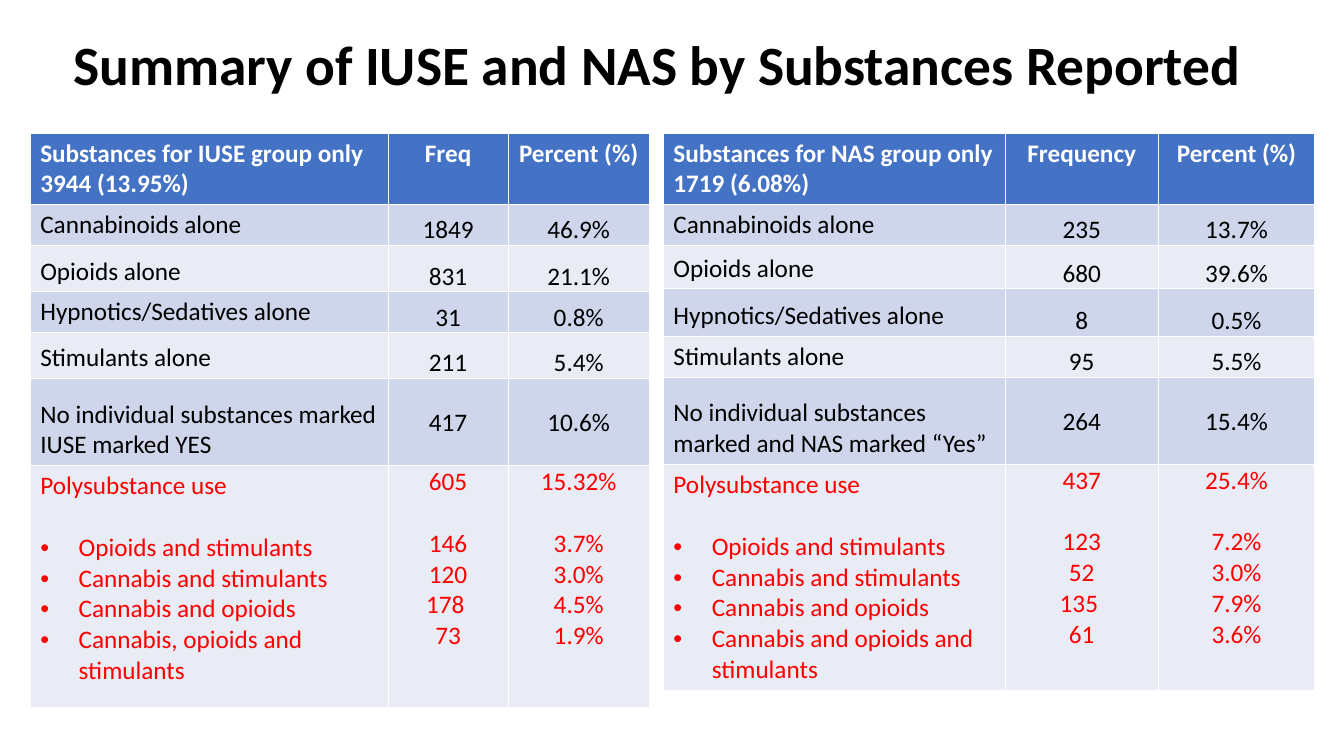
"""Build a slide with two tables of substances reported for IUSE and NAS."""
from lxml import etree
from pptx import Presentation, util as u
from pptx.dml.color import RGBColor
from pptx.enum import text
from pptx.oxml import ns

BLACK = RGBColor(0x00, 0x00, 0x00)
WHITE = RGBColor(0xFF, 0xFF, 0xFF)
RED = RGBColor(0xFF, 0x00, 0x00)
BLUE = RGBColor(0x44, 0x72, 0xC4)
BANDS = [RGBColor(0xE9, 0xEB, 0xF5), RGBColor(0xCF, 0xD5, 0xEA)]
LEFT, CENTER = text.PP_ALIGN.LEFT, text.PP_ALIGN.CENTER
TOP, MIDDLE, BOTTOM = (text.MSO_ANCHOR.TOP, text.MSO_ANCHOR.MIDDLE,
                       text.MSO_ANCHOR.BOTTOM)


def write(tf, lines, size=18, color=BLACK, bold=False, align=LEFT,
          bullets=False, gap=0):
    """Fill a text frame; bullets and gap apply below the first line."""
    for i, line in enumerate(lines.split("\n")):
        p = tf.paragraphs[0] if i == 0 else tf.add_paragraph()
        if bullets and i > 0:
            pPr = p._p.get_or_add_pPr()
            pPr.set("marL", str(u.Inches(0.38)))
            pPr.set("indent", str(u.Inches(-0.38)))
            etree.SubElement(pPr, ns.qn("a:buFont"), typeface="Arial")
            etree.SubElement(pPr, ns.qn("a:buChar"), char="•")
        if gap and i == 1:
            p.space_before = u.Pt(gap)
        p.alignment = align
        r = p.add_run()
        r.text = line
        r.font.name = "Calibri"
        r.font.size = u.Pt(size)
        r.font.bold = bold
        r.font.color.rgb = color


prs = Presentation()
prs.slide_width, prs.slide_height = u.Inches(13.33), u.Inches(7.5)
col, row = prs.slide_width / 100, prs.slide_height / 100
s = prs.slides.add_slide(prs.slide_layouts[5])

title = s.shapes.title
title.left, title.top = int(3.83 * col), int(5.33 * row)
title.width, title.height = int(91.07 * col), int(7.2 * row)
title.text_frame.auto_size = text.MSO_AUTO_SIZE.NONE
title.text_frame.vertical_anchor = MIDDLE
write(title.text_frame, "Summary of IUSE and NAS by Substances Reported ",
      size=39.6, bold=True, align=CENTER)
title.text_frame.paragraphs[0].line_spacing = 0.9

iuse = [
    ("Substances for IUSE group only\n3944 (13.95%)", "Freq", "Percent (%)"),
    ("Cannabinoids alone", "1849", "46.9%"),
    ("Opioids alone", "831", "21.1%"),
    ("Hypnotics/Sedatives alone", "31", "0.8%"),
    ("Stimulants alone", "211", "5.4%"),
    ("No individual substances marked\nIUSE marked YES", "417", "10.6%"),
    ("Polysubstance use\nOpioids and stimulants\nCannabis and stimulants\n"
     "Cannabis and opioids\nCannabis, opioids and stimulants",
     "605\n146\n120\n178 \n73", "15.32%\n3.7%\n3.0%\n4.5%\n1.9%"),
]
nas = [
    ("Substances for NAS group only\n1719 (6.08%)", "Frequency", "Percent (%)"),
    ("Cannabinoids alone", "235", "13.7%"),
    ("Opioids alone", "680", "39.6%"),
    ("Hypnotics/Sedatives alone", "8", "0.5%"),
    ("Stimulants alone", "95", "5.5%"),
    ("No individual substances marked and NAS marked “Yes”", "264", "15.4%"),
    ("Polysubstance use\nOpioids and stimulants\nCannabis and stimulants\n"
     "Cannabis and opioids\nCannabis and opioids and stimulants",
     "437\n123\n52\n135 \n61", "25.4%\n7.2%\n3.0%\n7.9%\n3.6%"),
]
tables = [
    (iuse, 2.25, [26.63, 8.93, 10.5],
     [9.4, 5.4, 6.13, 5.4, 6, 11.6, 32], TOP),
    (nas, 49.36, [25.43, 11.4, 11.63],
     [9.4, 5.4, 5.73, 6.27, 5.47, 11.47, 29.87], BOTTOM),
]

for data, left, widths, heights, poly_anchor in tables:
    tbl = s.shapes.add_table(
        len(heights), len(widths), int(left * col), int(17.6 * row),
        int(sum(widths) * col), int(sum(heights) * row)).table
    for j, width in enumerate(widths):
        tbl.columns[j].width = int(width * col)
    for i, (values, height) in enumerate(zip(data, heights)):
        tbl.rows[i].height = int(height * row)
        header, marked, poly = i == 0, i == 5, i == 6
        for j, value in enumerate(values):
            label = j == 0
            cell = tbl.cell(i, j)
            cell.fill.solid()
            cell.fill.fore_color.rgb = BLUE if header else BANDS[i % 2]
            if header:
                cell.vertical_anchor = TOP
            elif poly:
                cell.vertical_anchor = poly_anchor if label else TOP
            else:
                cell.vertical_anchor = MIDDLE if marked and not label else BOTTOM
            if not header and not label:
                cell.margin_left = cell.margin_right = u.Inches(0.01)
                cell.margin_top, cell.margin_bottom = u.Inches(0.01), 0
            write(cell.text_frame, value,
                  color=WHITE if header else RED if poly else BLACK,
                  bold=header, align=LEFT if label else CENTER,
                  bullets=poly and label, gap=22 if poly else 0)

prs.save("out.pptx")
